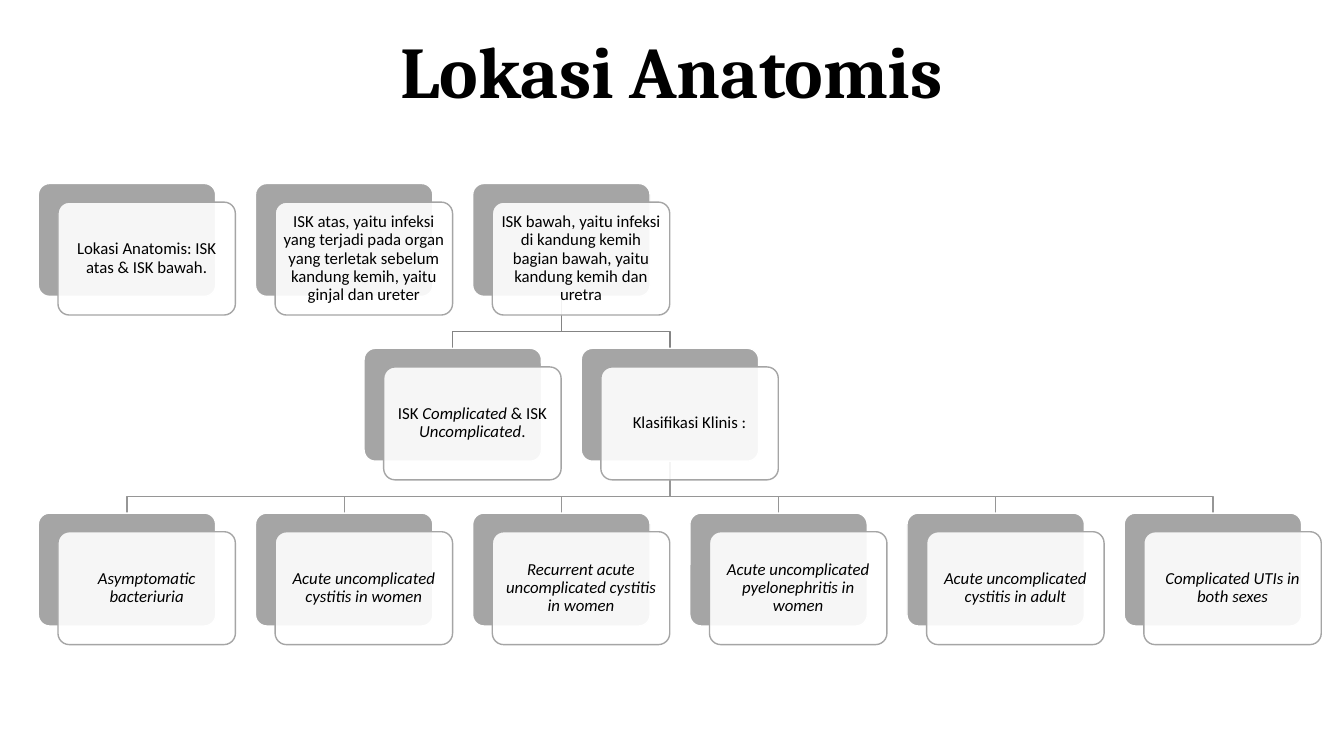
import pptx
import pptx.dml.color
import pptx.enum.shapes
import pptx.enum.text
import pptx.oxml.ns
import pptx.util
from lxml import etree
from pptx.util import Inches

LEFT, TOP = 0.38, 1.82
COLUMN_STEP, ROW_STEP = 2.154, 1.635
CARD_WIDTH, CARD_HEIGHT = 1.76, 1.12
FRONT_SHIFT_X, FRONT_SHIFT_Y = 0.195, 0.185
GREY, WHITE, BLACK = "A5A5A5", "FFFFFF", "000000"

# Each row: first column, then the cards; a card is a list of (text, italic).
ROWS = [
    (0, [
        [("Lokasi Anatomis: ISK atas & ISK bawah.", False)],
        [("ISK atas, yaitu infeksi yang terjadi pada organ yang terletak "
          "sebelum kandung kemih, yaitu ginjal dan ureter", False)],
        [("ISK bawah, yaitu infeksi di kandung kemih bagian bawah, yaitu "
          "kandung kemih dan uretra", False)],
    ]),
    (1.5, [
        [("ISK ", False), ("Complicated ", True), ("& ISK ", False),
         ("Uncomplicated", True), (".", False)],
        [("Klasifikasi Klinis :", False)],
    ]),
    (0, [
        [("Asymptomatic bacteriuria", True)],
        [("Acute uncomplicated cystitis in women", True)],
        [("Recurrent acute uncomplicated cystitis in women", True)],
        [("Acute uncomplicated pyelonephritis in women", True)],
        [("Acute uncomplicated cystitis in adult", True)],
        [("Complicated UTIs in both sexes", True)],
    ]),
]

# Parent row, parent column, child columns, line colour.
BRANCHES = [
    (1, 2.5, range(6), "969696"),
    (0, 2, (1.5, 2.5), "848484"),
]


def color(hex_value):
    return pptx.dml.color.RGBColor.from_string(hex_value)


def card_corner(row, column):
    return LEFT + column * COLUMN_STEP, TOP + row * ROW_STEP


def set_line(shape, hex_value):
    shape.line.color.rgb = color(hex_value)
    shape.line.width = pptx.util.Pt(1)


def write_text(frame, spans, **font_format):
    """Fill the frame with one centred paragraph of (text, italic) spans."""
    frame.word_wrap = True
    frame.vertical_anchor = pptx.enum.text.MSO_ANCHOR.MIDDLE
    para = frame.paragraphs[0]
    para.alignment = pptx.enum.text.PP_ALIGN.CENTER
    para.line_spacing = 0.9
    for text, italic in spans:
        span = para.add_run()
        span.text = text
        for name, value in {**font_format, "italic": italic}.items():
            setattr(span.font, name, value)
        span.font.color.rgb = color(BLACK)


def add_title(page, text):
    title = page.shapes.title
    place = {"left": 0.91, "top": 0.12, "width": 11.5, "height": 1.24}
    for name, value in place.items():
        setattr(title, name, Inches(value))
    write_text(title.text_frame, [(text, False)],
               name="Cambria", size=pptx.util.Pt(52), bold=True)


def add_panel(page, left, top, fill, line):
    panel = page.shapes.add_shape(
        pptx.enum.shapes.MSO_SHAPE.ROUNDED_RECTANGLE,
        Inches(left), Inches(top), Inches(CARD_WIDTH), Inches(CARD_HEIGHT))
    panel.adjustments[0] = 0.1
    panel.shadow.inherit = False
    panel.fill.solid()
    panel.fill.fore_color.rgb = color(fill)
    set_line(panel, line)
    return panel


def set_opacity(shape, percent):
    qn = pptx.oxml.ns.qn
    fill_color = shape.fill._xPr.find(qn("a:solidFill")).find(qn("a:srgbClr"))
    etree.SubElement(fill_color, qn("a:alpha"), val=str(percent * 1000))


def add_card(page, row, column, spans):
    """Grey panel with a translucent white panel in front that holds the text."""
    left, top = card_corner(row, column)
    add_panel(page, left, top, GREY, WHITE)
    front = add_panel(page, left + FRONT_SHIFT_X, top + FRONT_SHIFT_Y,
                      WHITE, GREY)
    set_opacity(front, 90)
    frame = front.text_frame
    for side in ("left", "top", "right", "bottom"):
        setattr(frame, f"margin_{side}", Inches(0.05))
    write_text(frame, spans, name="Calibri", size=pptx.util.Pt(12))


def add_branch(page, row, parent_column, child_column, line):
    """Elbow line from a card's bottom to the top of a card one row below."""
    parent_left, parent_top = card_corner(row, parent_column)
    child_left, child_top = card_corner(row + 1, child_column)
    start_x = parent_left + CARD_WIDTH / 2
    end_x = child_left + CARD_WIDTH / 2
    start_y = parent_top + CARD_HEIGHT
    bend_y = start_y + 0.35
    elbow = page.shapes.build_freeform(Inches(start_x), Inches(start_y))
    points = [(start_x, bend_y), (end_x, bend_y), (end_x, child_top)]
    elbow.add_line_segments(
        [(Inches(x), Inches(y)) for x, y in points], close=False)
    branch = elbow.convert_to_shape()
    branch.shadow.inherit = False
    branch.fill.background()
    set_line(branch, line)


def main():
    deck = pptx.Presentation()
    deck.slide_width, deck.slide_height = Inches(13.33), Inches(7.5)
    page = deck.slides.add_slide(deck.slide_layouts[5])
    add_title(page, "Lokasi Anatomis")
    for row, parent, children, line in BRANCHES:
        for child in children:
            add_branch(page, row, parent, child, line)
    for row, (first_column, cards) in enumerate(ROWS):
        for offset, spans in enumerate(cards):
            add_card(page, row, first_column + offset, spans)
    deck.save("out.pptx")


if __name__ == "__main__":
    main()
